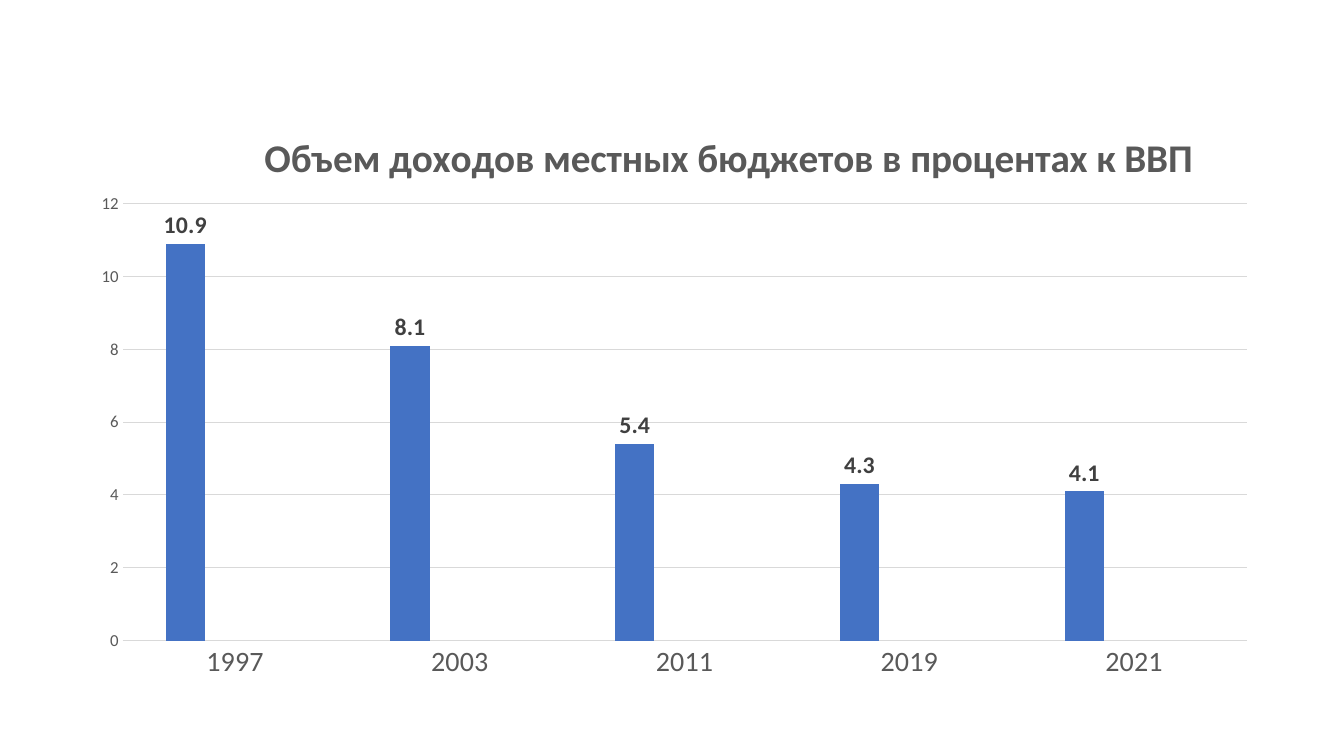
from lxml import etree
from pptx import Presentation
from pptx.chart import data as cd
from pptx.dml import color as dc
from pptx.enum import chart as ec
from pptx.oxml import ns
from pptx.util import Inches, Pt

HUES = {"blue": "4472C4", "orange": "ED7D31", "gray": "A5A5A5",
        "text": "595959", "label": "404040", "grid": "D9D9D9"}
TITLE = "Объем доходов местных бюджетов в процентах к ВВП"
YEARS = ["1997", "2003", "2011", "2019", "2021"]
SHARES = [10.9, 8.1, 5.4, 4.3, 4.1]


def paint(font, size, hue, bold=False):
    """Set the face, size, colour and weight of a font."""
    font.name, font.size, font.bold = "Calibri", Pt(size), bold
    font.color.rgb = dc.RGBColor.from_string(HUES[hue])


def rule(line):
    """Draw a thin grid-coloured line."""
    line.width = Pt(0.75)
    line.color.rgb = dc.RGBColor.from_string(HUES["grid"])


def place(node, index, **parts):
    """Give a chart part a manual layout in fractions of the chart."""
    old = node.find(ns.qn("c:layout"))
    if old is not None:
        node.remove(old)
    layout = etree.Element(ns.qn("c:layout"))
    manual = etree.SubElement(layout, ns.qn("c:manualLayout"))
    if "w" in parts:
        etree.SubElement(manual, ns.qn("c:layoutTarget")).set("val", "inner")
    for key in ("xMode", "yMode"):
        etree.SubElement(manual, ns.qn("c:" + key)).set("val", "edge")
    for key, value in parts.items():
        etree.SubElement(manual, ns.qn("c:" + key)).set("val", str(value))
    node.insert(index, layout)


def style_axes(chart):
    """Format the year axis and the percentage axis."""
    years, scale = chart.category_axis, chart.value_axis
    for axis, size in ((years, 20), (scale, 12)):
        axis.major_tick_mark = axis.minor_tick_mark = ec.XL_TICK_MARK.NONE
        paint(axis.tick_labels.font, size, "text")
    rule(years.format.line)
    scale.format.line.fill.background()
    scale.minimum_scale, scale.maximum_scale, scale.major_unit = 0, 12, 2
    rule(scale.major_gridlines.format.line)


def style_bars(plot):
    """Colour the series and label the shares."""
    plot.gap_width, plot.overlap = 219, -27
    plot.vary_by_categories = False
    for series, hue in zip(plot.series, ("blue", "orange", "gray")):
        series.format.fill.solid()
        series.format.fill.fore_color.rgb = dc.RGBColor.from_string(HUES[hue])
    labels = plot.series[0].data_labels
    labels.show_value = True
    labels.position = ec.XL_LABEL_POSITION.OUTSIDE_END
    paint(labels.font, 17, "label", True)


def add_income(slide, left, top, width, height):
    """Place the local income chart in the given box."""
    data = cd.CategoryChartData()
    data.categories = YEARS
    blank = [None] * len(YEARS)
    for number, values in enumerate((SHARES, blank, blank), 1):
        data.add_series(f"Series {number}", values)
    frame = slide.shapes.add_chart(
        ec.XL_CHART_TYPE.COLUMN_CLUSTERED, Inches(left), Inches(top),
        Inches(width), Inches(height), data)
    chart = frame.chart
    chart.has_legend = False
    chart.font.name, chart.font.size = "Calibri", Pt(10)
    chart.has_title = True
    title = chart.chart_title
    title.text_frame.text = TITLE
    paint(title.text_frame.paragraphs[0].runs[0].font, 28, "text", True)
    title.include_in_layout = False
    place(title._element, 1, x=0.15, y=0.05)
    area = chart._chartSpace.find(".//" + ns.qn("c:plotArea"))
    place(area, 0, x=0.037, y=0.184, w=0.943, h=0.731)
    style_axes(chart)
    style_bars(chart.plots[0])


def main():
    """Build and save the slide."""
    deck = Presentation()
    deck.slide_width, deck.slide_height = Inches(13.33), Inches(7.5)
    slide = deck.slides.add_slide(deck.slide_layouts[6])
    add_income(slide, 0.78, 0.93, 11.82, 5.93)
    deck.save("out.pptx")


if __name__ == "__main__":
    main()
